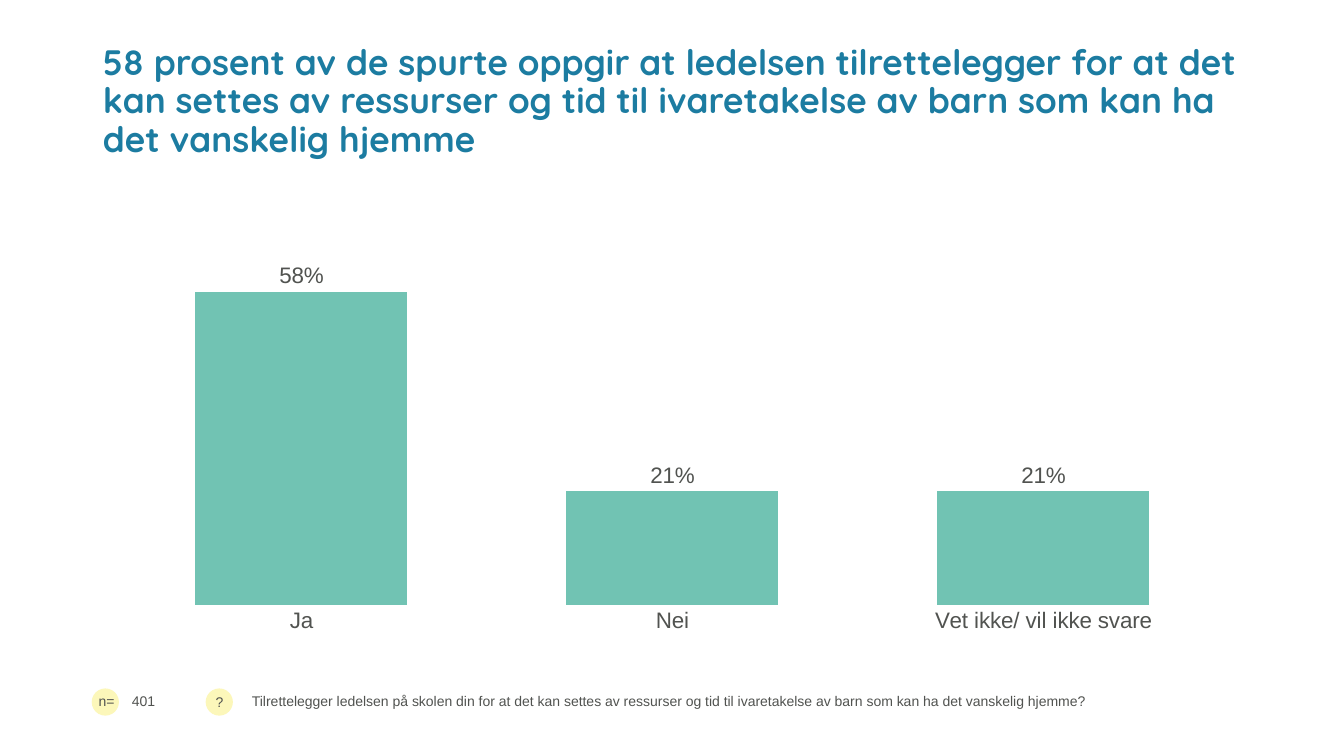
from dataclasses import dataclass

from lxml import etree
from pptx import Presentation
from pptx import util as u
from pptx.chart.data import CategoryChartData
from pptx.dml.color import RGBColor
from pptx.enum import chart as ch
from pptx.enum import shapes, text
from pptx.oxml import parse_xml
from pptx.oxml.ns import nsdecls

COLORS = {"heading": "1C7CA1", "body": "515350", "bar": "71C3B3",
          "badge": "FCF7BA", "background": "FFFFFF"}
BODY_FONT = "Arial"


@dataclass
class Note:
    words: str
    left: float
    top: float
    width: float
    anchor: text.MSO_ANCHOR = text.MSO_ANCHOR.TOP
    spacing: float = 1.0


BADGE_LEFTS = (2.04, 0.91)
NOTES = (
    Note("n=", 0.88, 6.82, 0.45),
    Note("?", 2.04, 6.83, 0.25),
    Note("Tilrettelegger ledelsen på skolen din for at det kan settes av ressurser "
         "og tid til ivaretakelse av barn som kan ha det vanskelig hjemme?",
         2.4, 6.83, 9.91, text.MSO_ANCHOR.MIDDLE, 0.9),
    Note("401", 1.21, 6.83, 0.74, text.MSO_ANCHOR.MIDDLE, 0.9),
)


def color(name: str) -> RGBColor:
    return RGBColor.from_string(COLORS[name])


def style(font, size: float, shade: str = "body", family: str = BODY_FONT,
          bold: bool = False) -> None:
    font.size = u.Pt(size)
    font.name = family
    font.bold = bold
    font.color.rgb = color(shade)


def add_heading(slide) -> None:
    heading = slide.shapes.title
    heading.left, heading.top = u.Inches(0.92), u.Inches(0.4)
    heading.width, heading.height = u.Inches(11.5), u.Inches(1.08)
    frame = heading.text_frame
    frame.word_wrap = True
    frame.auto_size = text.MSO_AUTO_SIZE.NONE
    frame.vertical_anchor = text.MSO_ANCHOR.TOP
    paragraph = frame.paragraphs[0]
    paragraph.alignment = text.PP_ALIGN.LEFT
    paragraph.line_spacing = 0.9
    run = paragraph.add_run()
    run.text = ("58 prosent av de spurte oppgir at ledelsen tilrettelegger for at det "
                "kan settes av ressurser og tid til ivaretakelse av barn som kan ha "
                "det vanskelig hjemme")
    style(run.font, 25.2, "heading", "Quicksand", True)


def add_badge(slide, left: float) -> None:
    badge = slide.shapes.add_shape(
        shapes.MSO_SHAPE.OVAL, u.Inches(left), u.Inches(6.83),
        u.Inches(0.27), u.Inches(0.27))
    badge.shadow.inherit = False
    badge.fill.solid()
    badge.fill.fore_color.rgb = color("badge")
    badge.line.fill.background()


def add_note(slide, note: Note) -> None:
    box = slide.shapes.add_textbox(
        u.Inches(note.left), u.Inches(note.top),
        u.Inches(note.width), u.Inches(0.27))
    frame = box.text_frame
    frame.word_wrap = True
    frame.vertical_anchor = note.anchor
    paragraph = frame.paragraphs[0]
    paragraph.line_spacing = note.spacing
    run = paragraph.add_run()
    run.text = note.words
    style(run.font, 10)


def set_plot_area(chart, x: float, y: float, w: float, h: float) -> None:
    plot_area = chart.plots[0]._element.getparent()
    for old in plot_area.findall("{*}layout"):
        plot_area.remove(old)
    layout = parse_xml(
        f'<c:layout {nsdecls("c")}><c:manualLayout><c:layoutTarget val="inner"/>'
        '<c:xMode val="edge"/><c:yMode val="edge"/></c:manualLayout></c:layout>')
    for key, value in {"x": x, "y": y, "w": w, "h": h}.items():
        etree.SubElement(layout[0], f"{{{layout.nsmap['c']}}}{key}", val=str(value))
    plot_area.insert(0, layout)


def add_answers(slide) -> None:
    answers = CategoryChartData(number_format="0%")
    answers.categories = ["Ja", "Nei", "Vet ikke/ vil ikke svare"]
    answers.add_series("Series 1", (0.58, 0.21, 0.21))
    chart = slide.shapes.add_chart(
        ch.XL_CHART_TYPE.COLUMN_CLUSTERED, u.Inches(0.92), u.Inches(1.62),
        u.Inches(11.5), u.Inches(4.76), answers).chart
    style(chart.font, 18)
    chart.has_legend = False
    chart.has_title = False

    shares = chart.value_axis
    shares.minimum_scale, shares.maximum_scale, shares.major_unit = 0, 0.8, 0.2
    shares.has_major_gridlines = False
    shares.tick_labels.number_format = "0%"
    shares.tick_labels.number_format_is_linked = False
    shares.visible = False

    replies = chart.category_axis
    replies.major_tick_mark = ch.XL_TICK_MARK.NONE
    replies.minor_tick_mark = ch.XL_TICK_MARK.NONE
    replies.format.line.fill.background()
    style(replies.tick_labels.font, 16)

    columns = chart.plots[0]
    columns.gap_width = 75
    columns.vary_by_categories = False
    bars = columns.series[0]
    bars.format.fill.solid()
    bars.format.fill.fore_color.rgb = color("bar")
    labels = bars.data_labels
    labels.show_value = True
    labels.number_format = "0%"
    labels.number_format_is_linked = False
    labels.position = ch.XL_LABEL_POSITION.OUTSIDE_END
    style(labels.font, 16)
    set_plot_area(chart, 0.02, 0.02, 0.96, 0.9)


def main() -> None:
    deck = Presentation()
    deck.slide_width, deck.slide_height = u.Inches(13.33), u.Inches(7.5)
    slide = deck.slides.add_slide(deck.slide_layouts[5])
    slide.background.fill.solid()
    slide.background.fill.fore_color.rgb = color("background")
    for left in BADGE_LEFTS:
        add_badge(slide, left)
    add_heading(slide)
    add_answers(slide)
    for note in NOTES:
        add_note(slide, note)
    deck.save("out.pptx")


if __name__ == "__main__":
    main()
